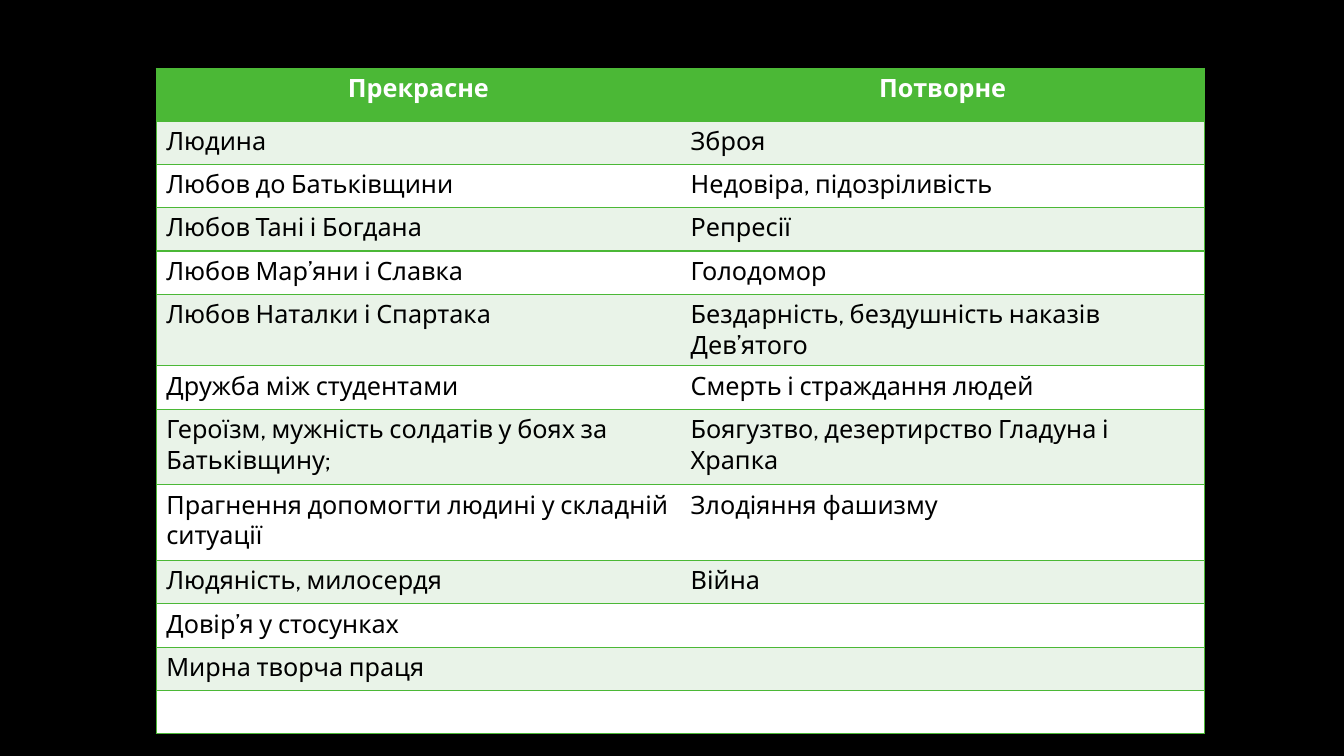
"""Build a slide with a two-column table contrasting the beautiful and the ugly."""
from lxml.etree import SubElement
from pptx import Presentation
from pptx.dml.color import RGBColor
from pptx.enum.text import PP_ALIGN
from pptx.oxml.ns import qn
from pptx.util import Inches, Pt

COLORS = {"background": "000000", "green": "4BB836", "band": "E9F3E8",
          "white": "FFFFFF", "text": "000000"}
FONT = "Cabin"

CONTRASTS = [
    ("Прекрасне", "Потворне"),
    ("Людина", "Зброя"),
    ("Любов до Батьківщини", "Недовіра, підозріливість"),
    ("Любов Тані і Богдана", "Репресії"),
    ("Любов Мар’яни і Славка", "Голодомор"),
    ("Любов Наталки і Спартака", "Бездарність, бездушність наказів Дев’ятого"),
    ("Дружба між студентами", "Смерть і страждання людей"),
    ("Героїзм, мужність солдатів у боях за Батьківщину;",
     "Боягузтво, дезертирство Гладуна і Храпка"),
    ("Прагнення допомогти людині у складній ситуації", "Злодіяння фашизму"),
    ("Людяність, милосердя", "Війна"),
    ("Довір’я у стосунках", ""),
    ("Мирна творча праця", ""),
    ("", ""),
]
HEADER_HEIGHT, ROW_HEIGHT, TALL_HEIGHT = 0.52, 0.43, 0.75
TALL_ROWS = (7, 8)


def write(cell, text, color="text", bold=False, align=PP_ALIGN.LEFT, size=18):
    paragraph = cell.text_frame.paragraphs[0]
    paragraph.alignment = align
    paragraph.font.size = Pt(size)
    if text:
        run = paragraph.add_run()
        run.text = text
        run.font.name = FONT
        run.font.size = Pt(size)
        run.font.bold = bold
        run.font.color.rgb = RGBColor.from_string(COLORS[color])


def set_borders(cell, open_side):
    properties = cell._tc.get_or_add_tcPr()
    for side in ("lnL", "lnR", "lnT", "lnB"):
        border = SubElement(properties, qn(f"a:{side}"), w=str(Pt(1)))
        if side == open_side:
            SubElement(border, qn("a:noFill"))
        else:
            line_fill = SubElement(border, qn("a:solidFill"))
            SubElement(line_fill, qn("a:srgbClr"), val=COLORS["green"])


prs = Presentation()
prs.slide_width, prs.slide_height = Inches(13.33), Inches(7.5)
slide = prs.slides.add_slide(prs.slide_layouts[6])
slide.background.fill.solid()
slide.background.fill.fore_color.rgb = RGBColor.from_string(COLORS["background"])

contrast_table = slide.shapes.add_table(
    len(CONTRASTS), 2, Inches(1.55), Inches(0.68), Inches(10.4), Inches(6.33)).table

for row_index, contrast in enumerate(CONTRASTS):
    is_header = row_index == 0
    height = TALL_HEIGHT if row_index in TALL_ROWS else ROW_HEIGHT
    contrast_table.rows[row_index].height = Inches(HEADER_HEIGHT if is_header else height)
    row_fill = "green" if is_header else "band" if row_index % 2 else "white"
    for column_index, text in enumerate(contrast):
        cell = contrast_table.cell(row_index, column_index)
        set_borders(cell, open_side="lnL" if column_index else "lnR")
        cell.fill.solid()
        cell.fill.fore_color.rgb = RGBColor.from_string(COLORS[row_fill])
        if is_header:
            write(cell, text, color="white", bold=True, align=PP_ALIGN.CENTER)
        else:
            write(cell, text)

prs.save("out.pptx")
